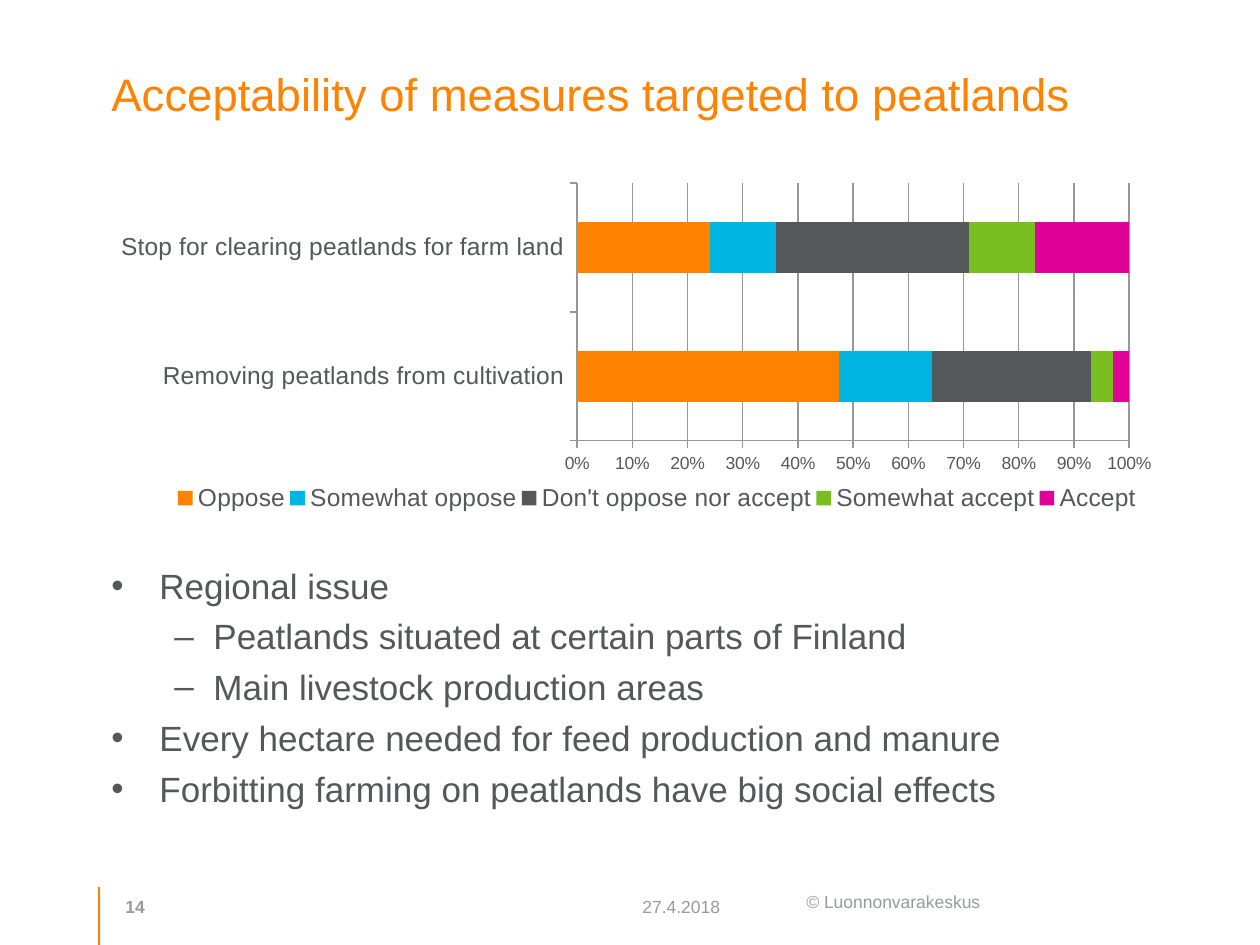
import lxml.etree
import pptx
import pptx.chart.data
import pptx.dml.color
import pptx.enum.chart
import pptx.enum.shapes
import pptx.enum.text
import pptx.oxml.ns
import pptx.util

PX_PER_INCH = 126
FONT = "Arial"
COLORS = {
    "orange": "FF8200", "rule": "F97F00", "blue": "00B5E2", "text": "54585A",
    "green": "78BE20", "pink": "E10098", "footer": "999A9B",
    "copyright": "979B9E", "grid": "979797",
}
CATEGORIES = ["Removing peatlands from cultivation",
              "Stop for clearing peatlands for farm land"]
SERIES = [
    ("Oppose", (48, 24), "orange"),
    ("Somewhat oppose", (17, 12), "blue"),
    ("Don't oppose nor accept", (29, 35), "text"),
    ("Somewhat accept", (4, 12), "green"),
    ("Accept", (3, 17), "pink"),
]
BULLETS = [
    (0, "Regional issue"),
    (1, "Peatlands situated at certain parts of Finland"),
    (1, "Main livestock production areas"),
    (0, "Every hectare needed for feed production and manure"),
    (0, "Forbitting farming on peatlands have big social effects"),
]
# Bullet character, left margin and hanging indent for each level
LEVELS = [("•", 48, -48), ("–", 102, -39)]


def px(length):
    return round(length * pptx.util.Inches(1) / PX_PER_INCH)


def rgb(name):
    return pptx.dml.color.RGBColor.from_string(COLORS[name])


def style_font(font, size, color, bold=False):
    values = {"name": FONT, "size": pptx.util.Pt(size), "bold": bold}
    for attribute, value in values.items():
        setattr(font, attribute, value)
    font.color.rgb = rgb(color)


def add_child(parent, tag, **attributes):
    return lxml.etree.SubElement(parent, pptx.oxml.ns.qn(tag), attributes)


def add_text_frame(slide, box, anchor="TOP"):
    frame = slide.shapes.add_textbox(*map(px, box)).text_frame
    frame.word_wrap = True
    frame.vertical_anchor = getattr(pptx.enum.text.MSO_ANCHOR, anchor)
    return frame


def add_label(slide, box, text, size, color, bold=False, anchor="TOP"):
    paragraph = add_text_frame(slide, box, anchor).paragraphs[0]
    paragraph.text = text
    style_font(paragraph.runs[0].font, size, color, bold)


def add_bullets(slide, box):
    frame = add_text_frame(slide, box)
    for index, (level, text) in enumerate(BULLETS):
        paragraph = frame.add_paragraph() if index else frame.paragraphs[0]
        paragraph.text = text
        paragraph.level = level
        paragraph.space_before = pptx.util.Pt(5 if index else 0)
        character, margin, indent = LEVELS[level]
        properties = paragraph._p.get_or_add_pPr()
        properties.set("marL", str(px(margin)))
        properties.set("indent", str(px(indent)))
        add_child(properties, "a:buFont", typeface=FONT)
        add_child(properties, "a:buChar", char=character)
        style_font(paragraph.runs[0].font, 20, "text")


def set_layout(element, chart_box, part_box, inner=False):
    """Fix a chart part at part_box, given relative to the chart's corner."""
    for old in element.findall(pptx.oxml.ns.qn("c:layout")):
        element.remove(old)
    layout = lxml.etree.Element(pptx.oxml.ns.qn("c:layout"))
    manual = add_child(layout, "c:manualLayout")
    if inner:
        add_child(manual, "c:layoutTarget", val="inner")
    for tag in ("c:xMode", "c:yMode"):
        add_child(manual, tag, val="edge")
    left, top, width, height = part_box
    for tag, length, whole in (("c:x", left, chart_box[2]), ("c:y", top, chart_box[3]),
                               ("c:w", width, chart_box[2]), ("c:h", height, chart_box[3])):
        add_child(manual, tag, val=f"{length / whole:.3f}")
    position = element.find(pptx.oxml.ns.qn("c:legendPos"))
    if position is None:
        element.insert(0, layout)
    else:
        position.addnext(layout)


def add_acceptability_chart(slide, box):
    data = pptx.chart.data.CategoryChartData()
    data.categories = CATEGORIES
    for name, values, _ in SERIES:
        data.add_series(name, values)
    chart = slide.shapes.add_chart(
        pptx.enum.chart.XL_CHART_TYPE.BAR_STACKED_100, *map(px, box), data).chart
    style_font(chart.font, 10, "text")
    chart.has_title = False

    plot = chart.plots[0]
    for attribute, value in {"gap_width": 150, "overlap": 100,
                             "vary_by_categories": False}.items():
        setattr(plot, attribute, value)
    for series, (_, _, color) in zip(plot.series, SERIES):
        series.format.fill.solid()
        series.format.fill.fore_color.rgb = rgb(color)

    value_axis, category_axis = chart.value_axis, chart.category_axis
    for axis, size in ((value_axis, 10), (category_axis, 14)):
        axis.major_tick_mark = pptx.enum.chart.XL_TICK_MARK.OUTSIDE
        axis.format.line.color.rgb = rgb("grid")
        style_font(axis.tick_labels.font, size, "text")
    value_axis.has_major_gridlines = True
    value_axis.major_gridlines.format.line.color.rgb = rgb("grid")
    for attribute, value in {"minimum_scale": 0, "maximum_scale": 1,
                             "major_unit": 0.1}.items():
        setattr(value_axis, attribute, value)
    value_axis.tick_labels.number_format = "0%"
    value_axis.tick_labels.number_format_is_linked = False

    chart.has_legend = True
    legend = chart.legend
    legend.position = pptx.enum.chart.XL_LEGEND_POSITION.BOTTOM
    legend.include_in_layout = False
    style_font(legend.font, 14, "text")
    plot_area = chart._chartSpace.chart.plotArea
    set_layout(plot_area, box, (478, 7, 552, 258), inner=True)
    set_layout(legend._element, box, (74, 304, 968, 36))


def add_footer(slide, box):
    left, top, _, height = box
    rule = slide.shapes.add_connector(
        pptx.enum.shapes.MSO_CONNECTOR.STRAIGHT,
        *map(px, (left, top, left, top + height)))
    rule.line.color.rgb = rgb("rule")
    rule.line.width = pptx.util.Pt(1)
    add_child(rule._element.spPr, "a:effectLst")
    top -= 2
    add_label(slide, (left + 14, top, 62, 38), "14", 10, "footer", True, "BOTTOM")
    add_label(slide, (left + 531, top, 155, 38), "27.4.2018", 10, "footer", anchor="BOTTOM")
    add_label(slide, (left + 695, top, 244, 34), "© Luonnonvarakeskus", 10, "copyright")


def main():
    presentation = pptx.Presentation()
    presentation.slide_width = px(1260)
    presentation.slide_height = px(945)
    slide = presentation.slides.add_slide(presentation.slide_layouts[6])
    add_label(slide, (99, 60, 1040, 144),
              "Acceptability of measures targeted to peatlands", 26, "orange")
    add_acceptability_chart(slide, (99, 176, 1072, 350))
    add_bullets(slide, (99, 558, 1040, 295))
    add_footer(slide, (99, 887, 1040, 58))
    presentation.save("out.pptx")


if __name__ == "__main__":
    main()
